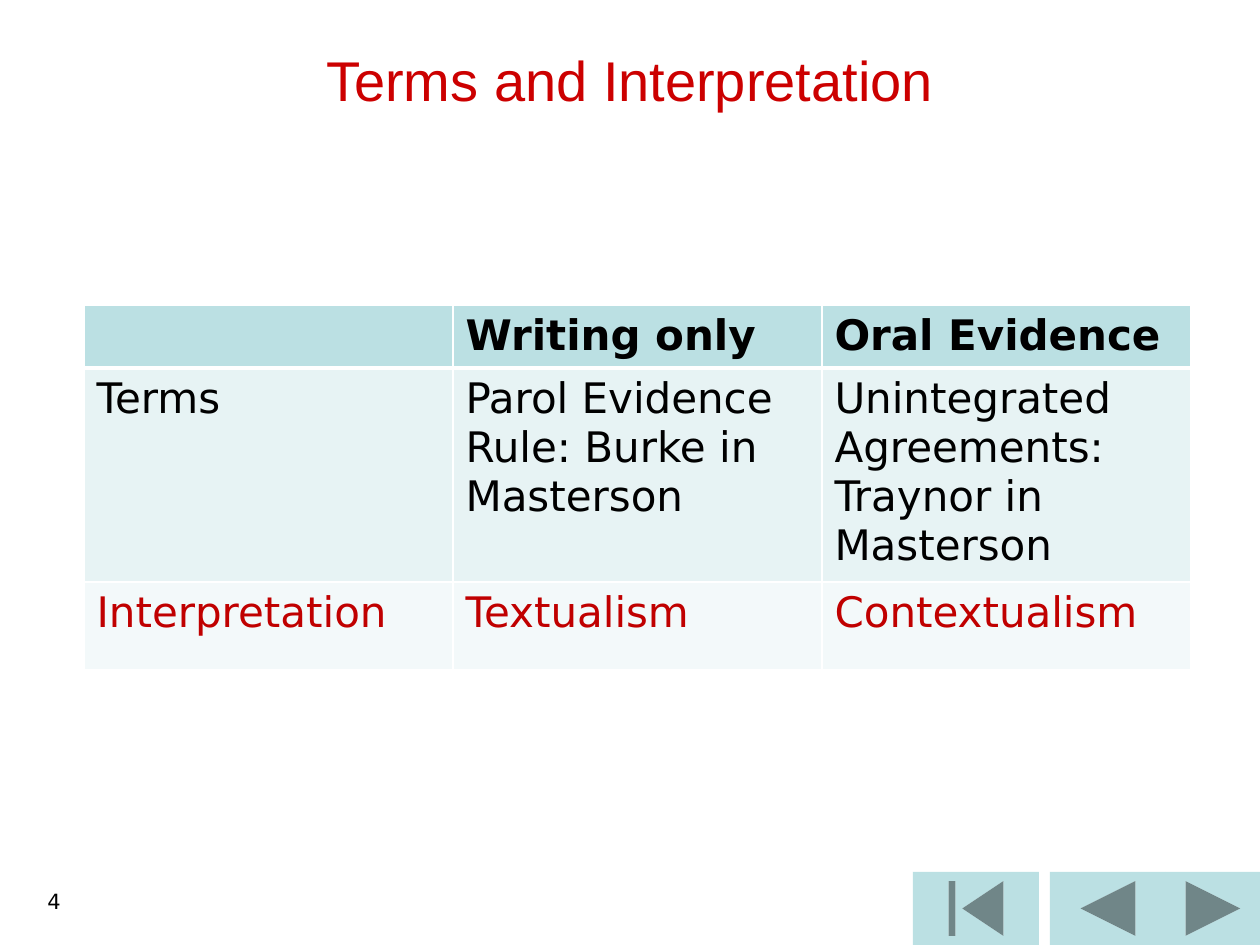
from dataclasses import dataclass

from lxml.etree import SubElement
from pptx import Presentation
from pptx.dml.color import RGBColor
from pptx.enum.shapes import MSO_SHAPE as Shape
from pptx.enum.text import MSO_ANCHOR as Anchor, PP_ALIGN as Align
from pptx.oxml.ns import qn
from pptx.util import Pt

EMU_PER_PX = 914400 / 126
TITLE_ONLY = 5


@dataclass(frozen=True)
class Theme:
    """Colours, fonts and type sizes of the slide."""
    title: str = "CC0000"
    text: str = "000000"
    accent: str = "C00000"
    header: str = "BBE0E3"
    band: str = "E7F3F4"
    light_band: str = "F3F9FA"
    border: str = "FFFFFF"
    title_font: str = "Arial"
    body_font: str = "DejaVu Sans"
    title_size: int = 32
    table_size: int = 24
    number_size: int = 12


THEME = Theme()

TABLE_ROWS = [
    (63, THEME.header, THEME.text, ["", "Writing only", "Oral Evidence"]),
    (214, THEME.band, THEME.text,
     ["Terms", "Parol Evidence Rule: Burke in Masterson",
      "Unintegrated Agreements: Traynor in Masterson"]),
    (88, THEME.light_band, THEME.accent,
     ["Interpretation", "Textualism", "Contextualism"]),
]

BUTTONS = [
    (Shape.ACTION_BUTTON_BACK_OR_PREVIOUS, 1050, 116),
    (Shape.ACTION_BUTTON_BEGINNING, 913, 126),
    (Shape.ACTION_BUTTON_FORWARD_OR_NEXT, 1166, 94),
]


def px(length):
    """Turn pixels into EMU."""
    return round(length * EMU_PER_PX)


def rgb(colour):
    """Return the colour object for a hex string."""
    return RGBColor.from_string(colour)


def write(frame, text, font, size, colour, bold=False, align=None):
    """Fill a text frame with one formatted paragraph."""
    frame.text = text
    para = frame.paragraphs[0]
    para.alignment = align
    for span in para.runs:
        span.font.name = font
        span.font.size = Pt(size)
        span.font.bold = bold
        span.font.color.rgb = rgb(colour)


def place(shape, left, top, width, height):
    """Set the position and size of a shape."""
    shape.left, shape.top = px(left), px(top)
    shape.width, shape.height = px(width), px(height)


def add_title(page, text):
    """Format the title placeholder."""
    title = page.shapes.title
    place(title, 0, 0, 1260, 158)
    title.text_frame.vertical_anchor = Anchor.MIDDLE
    write(title.text_frame, text, THEME.title_font, THEME.title_size,
          THEME.title, align=Align.CENTER)


def add_button(page, kind, left, width):
    """Add a navigation button along the bottom edge."""
    button = page.shapes.add_shape(kind, px(left), px(872), px(width), px(73))
    button.shadow.inherit = False
    button.fill.solid()
    button.fill.fore_color.rgb = rgb(THEME.header)
    button.line.fill.background()


def add_borders(cell, top, bottom):
    """Draw the four cell borders, with top and bottom widths in points."""
    properties = cell._tc.get_or_add_tcPr()
    for side, width in zip("LRTB", (1, 1, top, bottom)):
        line = SubElement(properties, qn(f"a:ln{side}"), w=str(Pt(width)))
        fill = SubElement(line, qn("a:solidFill"))
        SubElement(fill, qn("a:srgbClr"), val=THEME.border)


def add_terms_table(page):
    """Add the table that sets terms against interpretation."""
    height = sum(row[0] for row in TABLE_ROWS)
    table = page.shapes.add_table(
        3, 3, px(84), px(305), px(1107), px(height)).table
    table.first_row = table.horz_banding = False
    for column in table.columns:
        column.width = px(369)
    for index, (row_height, fill, colour, texts) in enumerate(TABLE_ROWS):
        table.rows[index].height = px(row_height)
        for cell, text in zip(table.rows[index].cells, texts):
            add_borders(cell, 3 if index == 1 else 1, 3 if index == 0 else 1)
            cell.fill.solid()
            cell.fill.fore_color.rgb = rgb(fill)
            write(cell.text_frame, text, THEME.body_font, THEME.table_size,
                  colour, bold=index == 0)


def add_page_number(page, text):
    """Add the page number at the lower left."""
    box = page.shapes.add_textbox(px(-189), px(882), px(262), px(63))
    box.text_frame.word_wrap = True
    write(box.text_frame, text, THEME.body_font, THEME.number_size,
          THEME.text, align=Align.RIGHT)


def main():
    """Build and save the slide."""
    deck = Presentation()
    deck.slide_width, deck.slide_height = px(1260), px(945)
    page = deck.slides.add_slide(deck.slide_layouts[TITLE_ONLY])
    for button in BUTTONS:
        add_button(page, *button)
    add_title(page, "Terms and Interpretation")
    add_terms_table(page)
    add_page_number(page, "4")
    deck.save("out.pptx")


if __name__ == "__main__":
    main()
